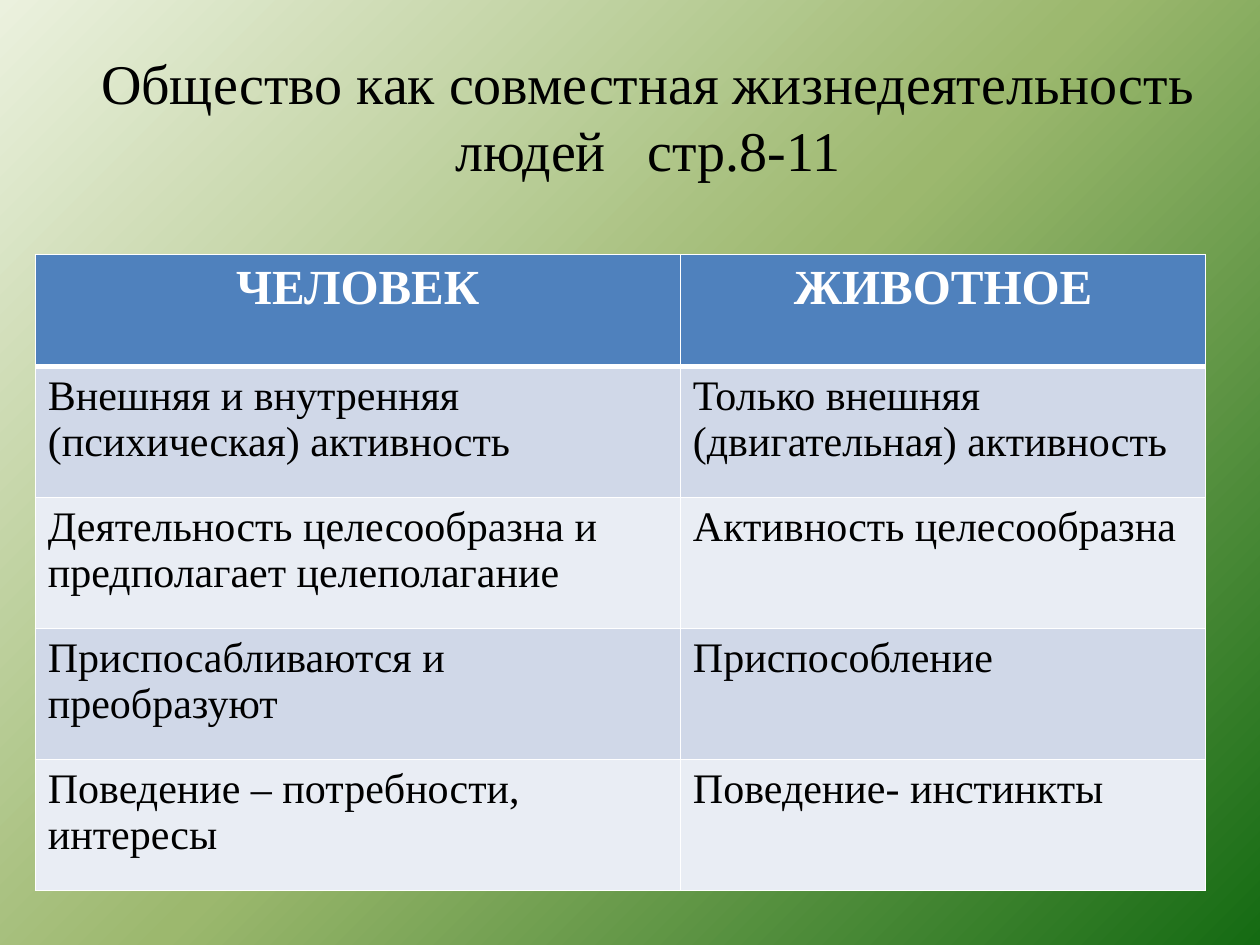
from copy import deepcopy
from dataclasses import dataclass

from lxml import etree
from pptx import Presentation
from pptx.dml.color import RGBColor
from pptx.enum import text
from pptx.oxml.ns import qn
from pptx.util import Inches, Pt

FONT = "Times New Roman"
COLORS = {
    "pale": "EBF1DE",
    "olive": "9CB86E",
    "green": "156B13",
    "black": "000000",
    "white": "FFFFFF",
    "header": "4F81BD",
    "odd": "D0D8E8",
    "even": "E9EDF4",
}
COLUMN_WIDTHS = (5.12, 4.17)
HEADER_HEIGHT, BODY_HEIGHT = 0.89, 1.04


@dataclass(frozen=True)
class Comparison:
    human: str
    animal: str


@dataclass(frozen=True)
class TextStyle:
    size: int
    color: str
    bold: bool = False
    align: text.PP_ALIGN = text.PP_ALIGN.LEFT


TITLE_STYLE = TextStyle(32, "black", align=text.PP_ALIGN.CENTER)
HEADER_STYLE = TextStyle(28, "white", True, text.PP_ALIGN.CENTER)
BODY_STYLE = TextStyle(24, "black")

ROWS = (
    Comparison("ЧЕЛОВЕК", "ЖИВОТНОЕ"),
    Comparison("Внешняя и внутренняя (психическая) активность",
               "Только внешняя (двигательная) активность"),
    Comparison("Деятельность целесообразна и предполагает целеполагание",
               "Активность целесообразна"),
    Comparison("Приспосабливаются и преобразуют", "Приспособление"),
    Comparison("Поведение – потребности, интересы", "Поведение- инстинкты"),
)


def rgb(name: str) -> RGBColor:
    return RGBColor.from_string(COLORS[name])


def write(frame, words: str, style: TextStyle) -> None:
    para = frame.paragraphs[0]
    para.alignment = style.align
    span = para.add_run()
    span.text = words
    span.font.name = FONT
    span.font.size = Pt(style.size)
    span.font.bold = style.bold
    span.font.color.rgb = rgb(style.color)


def paint_background(page) -> None:
    """Diagonal three-colour gradient from top left to bottom right."""
    fill = page.background.fill
    fill.gradient()
    fill.gradient_angle = 315
    stop_list = next(page.element.iter(qn("a:gsLst")))
    stop_list.insert(1, deepcopy(stop_list[0]))
    stops = zip(fill.gradient_stops, (0, 0.5, 1), ("pale", "olive", "green"))
    for stop, position, color in stops:
        stop.position = position
        stop.color.rgb = rgb(color)


def set_borders(cell, top: int, bottom: int) -> None:
    properties = cell._tc.get_or_add_tcPr()
    for side, width in (("L", 1), ("R", 1), ("T", top), ("B", bottom)):
        line = etree.SubElement(properties, qn(f"a:ln{side}"), w=str(Pt(width)))
        solid = etree.SubElement(line, qn("a:solidFill"))
        etree.SubElement(solid, qn("a:srgbClr"), val=COLORS["white"])


def add_title(page, words: str) -> None:
    title = page.shapes.title
    title.left, title.top = Inches(0.28), Inches(0.29)
    title.width, title.height = Inches(9.73), Inches(1.25)
    title.text_frame.vertical_anchor = text.MSO_ANCHOR.MIDDLE
    write(title.text_frame, words, TITLE_STYLE)


def add_comparison_table(page, rows: tuple[Comparison, ...]) -> None:
    heights = [HEADER_HEIGHT] + [BODY_HEIGHT] * (len(rows) - 1)
    table = page.shapes.add_table(
        len(rows), len(COLUMN_WIDTHS), Inches(0.28), Inches(2.02),
        Inches(sum(COLUMN_WIDTHS)), Inches(sum(heights))).table
    for column, width in zip(table.columns, COLUMN_WIDTHS):
        column.width = Inches(width)
    for index, (row, height) in enumerate(zip(rows, heights)):
        table.rows[index].height = Inches(height)
        is_header = index == 0
        color = "header" if is_header else "odd" if index % 2 else "even"
        for cell, words in zip(table.rows[index].cells, (row.human, row.animal)):
            set_borders(cell, top=3 if index == 1 else 1,
                        bottom=3 if is_header else 1)
            cell.fill.solid()
            cell.fill.fore_color.rgb = rgb(color)
            write(cell.text_frame, words,
                  HEADER_STYLE if is_header else BODY_STYLE)


def main() -> None:
    deck = Presentation()
    deck.slide_width, deck.slide_height = Inches(10), Inches(7.5)
    page = deck.slides.add_slide(deck.slide_layouts.get_by_name("Title Only"))
    paint_background(page)
    add_title(page, "Общество как совместная жизнедеятельность людей   стр.8-11")
    add_comparison_table(page, ROWS)
    deck.save("out.pptx")


if __name__ == "__main__":
    main()
